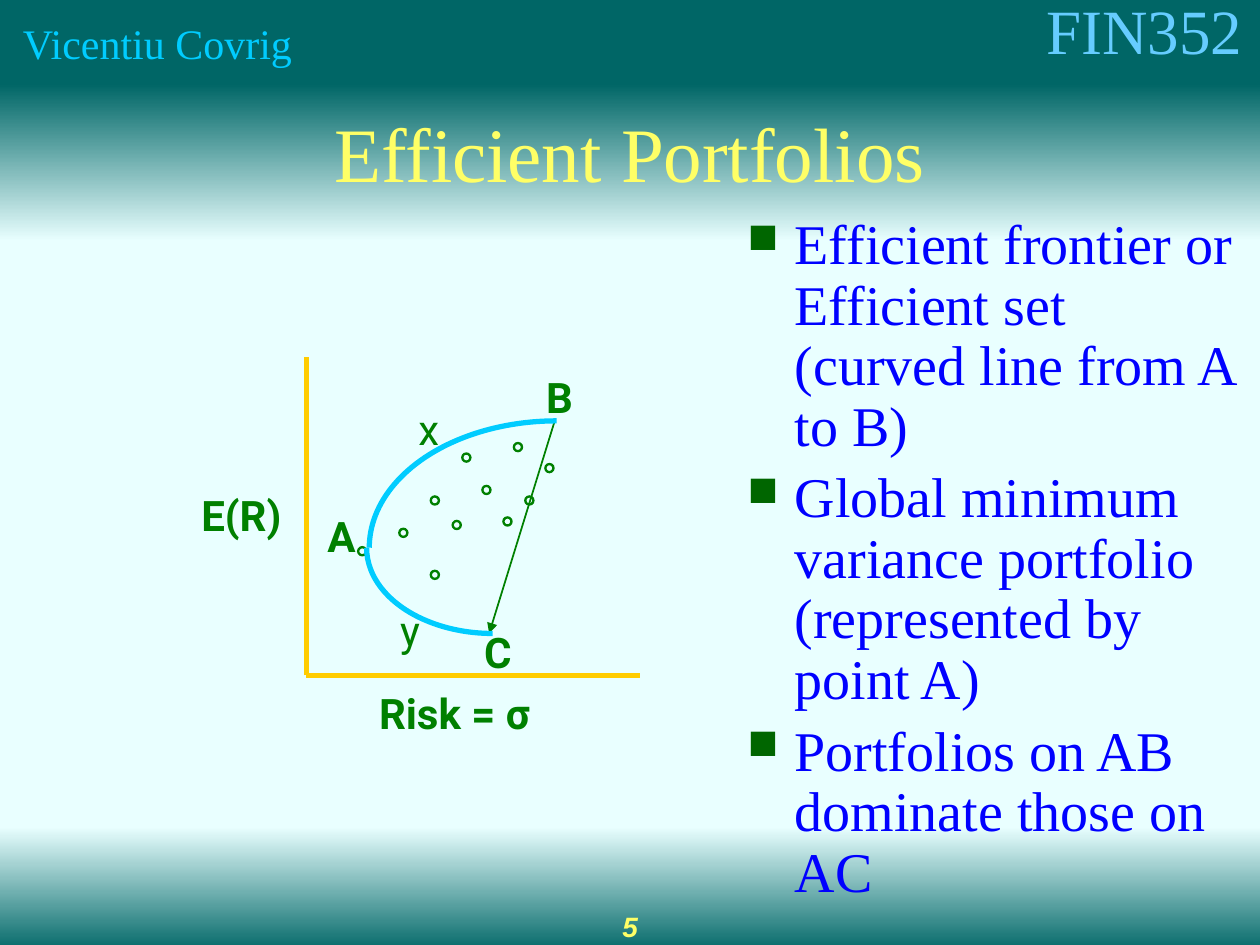
from lxml import etree
from pptx import Presentation
from pptx.dml.color import RGBColor
from pptx.enum.shapes import MSO_CONNECTOR, MSO_SHAPE
from pptx.enum.text import MSO_ANCHOR, PP_ALIGN
from pptx.oxml.ns import qn
from pptx.util import Pt

RECT, ARC, DONUT = MSO_SHAPE.RECTANGLE, MSO_SHAPE.ARC, MSO_SHAPE.DONUT
STRAIGHT = MSO_CONNECTOR.STRAIGHT
LEFT, CENTER, RIGHT = PP_ALIGN.LEFT, PP_ALIGN.CENTER, PP_ALIGN.RIGHT
MIDDLE = MSO_ANCHOR.MIDDLE
SERIF, SANS = "Times New Roman", "Roboto"
COLORS = {
    "pale": "E9FFFF", "teal": "006666", "course": "66CCFF", "cyan": "00CCFF",
    "yellow": "FFFF66", "text": "0000FF", "bullet": "006600",
    "green": "008000", "axis": "FFCC00",
}


def rgb(name):
    return RGBColor.from_string(COLORS[name])


def write(paragraph, text, font, size, color, bold=False, align=LEFT):
    paragraph.text = text
    paragraph.alignment = align
    paragraph.font.name = font
    paragraph.font.size = Pt(size)
    paragraph.font.bold = bold
    paragraph.font.color.rgb = rgb(color)


prs = Presentation()
prs.slide_width, prs.slide_height = Pt(720), Pt(540)
slide = prs.slides.add_slide(prs.slide_layouts[6])
slide.background.fill.solid()
slide.background.fill.fore_color.rgb = rgb("pale")
shapes = slide.shapes

# Bands: left, top, width, height, top colour, bottom colour
bands = [
    (-1.5, 472.5, 729, 72, "pale", "teal"),
    (0, 0, 724, 50, "teal", "teal"),
    (0, 48, 720, 90, "teal", "pale"),
]
for left, top, width, height, start, end in bands:
    band = shapes.add_shape(RECT, Pt(left), Pt(top), Pt(width), Pt(height))
    band.shadow.inherit = False
    band.line.fill.background()
    if start == end:
        band.fill.solid()
        band.fill.fore_color.rgb = rgb(start)
    else:
        band.fill.gradient()
        band.fill.gradient_angle = 270
        for stop, color in zip(band.fill.gradient_stops, (start, end)):
            stop.color.rgb = rgb(color)

# The last band carries the title
title = band.text_frame
title.word_wrap = True
title.vertical_anchor = MIDDLE
write(title.paragraphs[0], "Efficient Portfolios", SERIF, 44, "yellow", align=CENTER)
title.paragraphs[0].line_spacing = 0.7

# Header and footer
course = shapes.add_textbox(Pt(309), Pt(-8.5), Pt(408), Pt(50)).text_frame
course.word_wrap = True
write(course.paragraphs[0], "FIN352", SERIF, 36, "course", align=RIGHT)

author = shapes.add_textbox(Pt(6), Pt(14.5), Pt(294), Pt(27)).text_frame
author.word_wrap = True
write(author.paragraphs[0], "Vicentiu Covrig", SERIF, 24, "cyan")
author.paragraphs[0].line_spacing = 0.7

page = shapes.add_textbox(Pt(276), Pt(516), Pt(168), Pt(36)).text_frame
page.word_wrap = True
write(page.paragraphs[0], "5", "Arial", 16, "yellow", bold=True, align=CENTER)
page.paragraphs[0].font.italic = True

# Bullet points
points = [
    "Efficient frontier or Efficient set (curved line from A to B)",
    "Global minimum variance portfolio (represented by point A)",
    "Portfolios on AB dominate those on AC",
]
body = shapes.add_textbox(Pt(420), Pt(120), Pt(300), Pt(312)).text_frame
body.word_wrap = True
for i, point in enumerate(points):
    paragraph = body.add_paragraph() if i else body.paragraphs[0]
    paragraph.line_spacing = 0.9
    if i:
        paragraph.space_before = Pt(6.4)
    props = paragraph._p.get_or_add_pPr()
    props.set("marL", str(Pt(27)))
    props.set("indent", str(Pt(-27)))
    bullet_color = etree.SubElement(props, qn("a:buClr"))
    etree.SubElement(bullet_color, qn("a:srgbClr"), val=COLORS["bullet"])
    etree.SubElement(props, qn("a:buSzPct"), val="75000")
    etree.SubElement(props, qn("a:buChar"), char="■")
    write(paragraph, point, SERIF, 32, "text")

# Straight lines: start x, start y, end x, end y, colour, width, arrowhead
lines = [
    (317, 240.5, 279.5, 362, "green", 1, True),
    (175, 386, 366, 386, "axis", 3, False),
    (175, 386, 175, 204, "axis", 3, False),
]
for x1, y1, x2, y2, color, width, arrow in lines:
    line = shapes.add_connector(STRAIGHT, Pt(x1), Pt(y1), Pt(x2), Pt(y2))
    line.line.color.rgb = rgb(color)
    line.line.width = Pt(width)
    if arrow:
        etree.SubElement(line.line._get_or_add_ln(), qn("a:tailEnd"), type="triangle")
    etree.SubElement(line._element.spPr, qn("a:effectLst"))

# Portfolios inside the frontier, by centre
portfolios = [
    (207, 315), (261, 300), (278, 280), (230.5, 304.5), (248.5, 328.5),
    (248.5, 286), (266.5, 261.5), (296, 255.5), (302.5, 286), (314, 267.5),
    (290, 298),
]
diameter = 6
for x, y in portfolios:
    dot = shapes.add_shape(DONUT, Pt(x - diameter / 2), Pt(y - diameter / 2),
                           Pt(diameter), Pt(diameter))
    dot.adjustments[0] = 0.23
    dot.shadow.inherit = False
    dot.fill.solid()
    dot.fill.fore_color.rgb = rgb("green")
    dot.line.fill.background()

# Quarter ellipses: centre x, centre y, radii, start and end angle in degrees
arcs = [
    (281.5, 313, 72, 49, 90, 180),
    (318, 313, 107, 72.5, 180, 270),
]
for x, y, rx, ry, start, end in arcs:
    curve = shapes.add_shape(ARC, Pt(x - rx), Pt(y - ry), Pt(2 * rx), Pt(2 * ry))
    # Angles are stored in 60000ths of a degree, adjustments in 100000ths
    curve.adjustments[0], curve.adjustments[1] = start * 0.6, end * 0.6
    curve.shadow.inherit = False
    curve.fill.background()
    curve.line.color.rgb = rgb("cyan")
    curve.line.width = Pt(3)

# Labels: text, left, top, width, bold
labels = [
    ("x", 232, 227, 26.5, False),
    ("y", 221.5, 342, 26.5, False),
    ("A", 180, 288, 31.5, True),
    ("B", 305, 209, 31.5, True),
    ("C", 269.5, 354.5, 31.5, True),
    ("Risk = σ", 209.5, 389.5, 107, True),
    ("E(R)", 108, 276, 64, True),
]
for text, left, top, width, bold in labels:
    label = shapes.add_textbox(Pt(left), Pt(top), Pt(width), Pt(36)).text_frame
    label.word_wrap = False
    write(label.paragraphs[0], text, SANS, 24, "green", bold)

prs.save("out.pptx")
